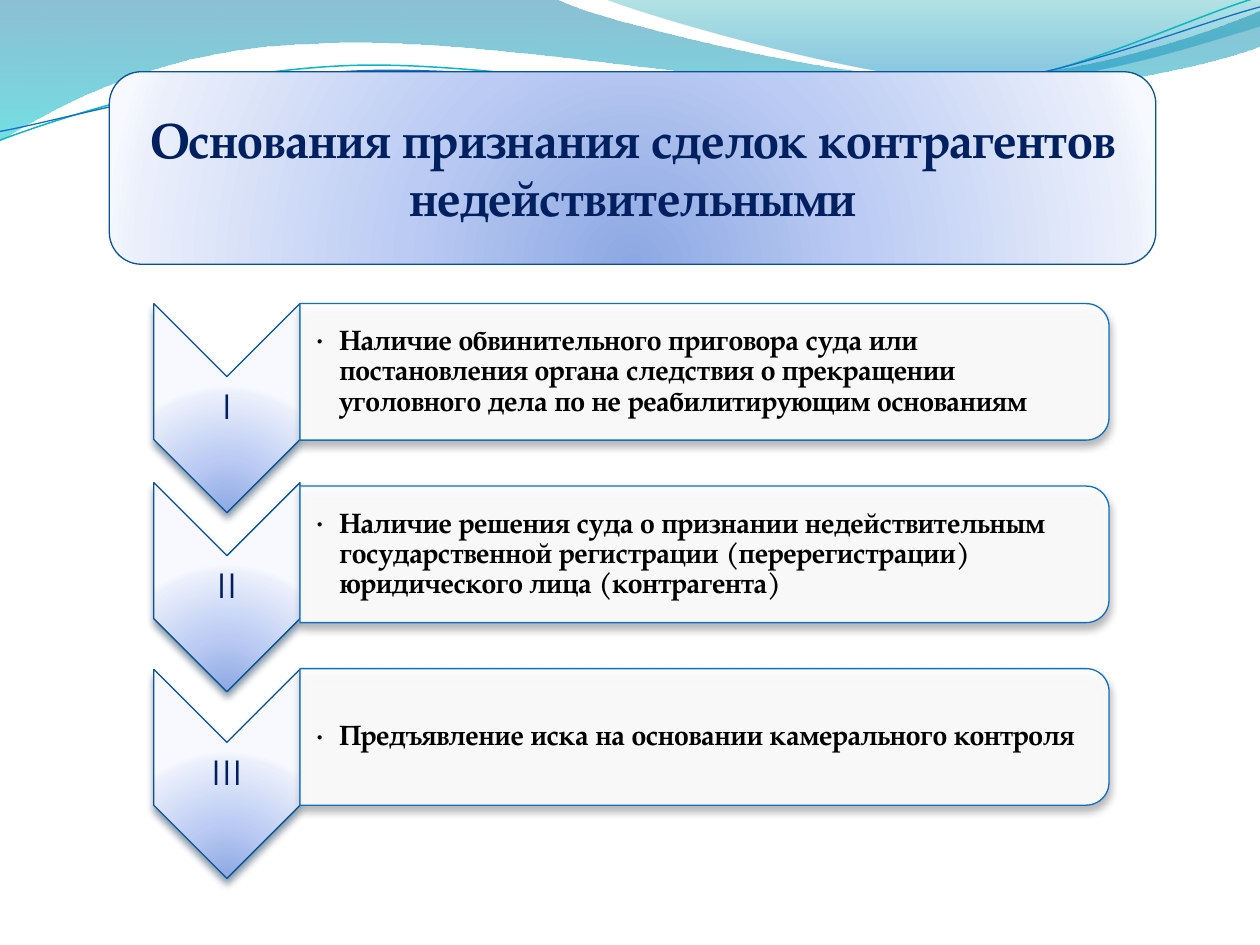
from dataclasses import dataclass

from lxml import etree
from pptx import Presentation
from pptx.dml.color import RGBColor
from pptx.enum.shapes import MSO_SHAPE
from pptx.enum.text import MSO_ANCHOR, PP_ALIGN
from pptx.oxml.ns import qn
from pptx.util import Pt

ROUND_RECT = MSO_SHAPE.ROUNDED_RECTANGLE
CHEVRON = MSO_SHAPE.CHEVRON
ROUND_SIDE = MSO_SHAPE.ROUND_2_SAME_RECTANGLE
CENTER, LEFT = PP_ALIGN.CENTER, PP_ALIGN.LEFT
MIDDLE = MSO_ANCHOR.MIDDLE


@dataclass(frozen=True)
class Theme:
    serif: str = "TeX Gyre Pagella"
    sans: str = "Montserrat"
    title_size: float = 28
    label_size: float = 20
    body_size: float = 16
    navy: str = "002060"
    black: str = "000000"
    white: str = "FFFFFF"
    edge: str = "095295"
    blue: str = "0F6FC6"
    teal: str = "0AB8BF"
    chevron_shadow: str = "042747"
    card_shadow: str = "5A5A5A"
    # Gradient stops: position, colour, opacity (all in percent)
    glow: tuple = ((0, "8DA8E3", 100), (43, "BBCBF3", 100),
                   (93, "EAEFFB", 100), (100, "F7F9FF", 100))
    wave_left: tuple = ((0, "0074A1", 45), (100, "00C6CF", 55))
    wave_right: tuple = ((0, "00A1A9", 30), (80, "008BBF", 45))


T = Theme()

# Outlines in points: one pair is a straight step, three pairs are a curve
WAVE_LEFT = [
    ((0, 0),), ((317, -1),),
    ((343, 12), (478, 45), (546, 45)), ((614, 45), (690, 19), (720, 6)),
    ((721, 26),), ((708, 32), (626, 55), (537, 54)),
    ((448, 54), (275, 20), (185, 24.5)), ((93, 26), (33, 60), (-1, 81)),
]
WAVE_RIGHT = [
    ((345, -1),), ((366, 8), (491, 45), (554, 47)),
    ((616, 50), (692, 23), (720, 15)), ((720, 0),),
]
# The two lines are turned by LINE_TURN degrees after drawing
LINE_TURN = 357.3
TEAL_LINE = [
    ((-1.4, 63.1),), ((34.2, 51.7), (114.3, 29.4), (199.4, 29.9)),
    ((284.4, 30.5), (425.8, 67.2), (512, 64.7)),
    ((599.2, 62.3), (676.1, 25.9), (720.6, 15.4)),
]
BLUE_LINE = [
    ((-1.1, 58.1),), ((33.2, 53.7), (118.2, 32.6), (204.3, 33.2)),
    ((290.4, 33.7), (429.1, 63.8), (515.3, 61.4)),
    ((601.4, 59.4), (678.9, 30), (721.4, 21)),
]

TITLE = "Основания признания сделок контрагентов недействительными"
# Label, statement, vertical shift of the chevron
ROWS = [
    ("I", "Наличие обвинительного приговора суда или постановления органа "
          "следствия о прекращении уголовного дела по не реабилитирующим "
          "основаниям", 0),
    ("II", "Наличие решения суда о признании недействительным "
           "государственной регистрации (перерегистрации) юридического лица "
           "(контрагента)", -2),
    ("III", "Предъявление иска на основании камерального контроля", 0.4),
]


def add_node(parent, tag, **attrs):
    return etree.SubElement(parent, qn(tag), {k: str(v) for k, v in attrs.items()})


def add_color(parent, color, opacity):
    node = add_node(parent, "a:srgbClr", val=color)
    add_node(node, "a:alpha", val=opacity * 1000)


def set_gradient(s, stops, radial=False):
    s.fill.gradient()
    grad = s.fill._xPr.find(qn("a:gradFill"))
    grad.clear()
    grad.set("rotWithShape", "0")
    gs_list = add_node(grad, "a:gsLst")
    for pos, color, opacity in stops:
        add_color(add_node(gs_list, "a:gs", pos=pos * 1000), color, opacity)
    if radial:
        focus = add_node(grad, "a:path", path="circle")
        add_node(focus, "a:fillToRect", l=50000, t=130000, r=50000, b=-30000)
    else:
        add_node(grad, "a:lin", ang=5400000, scaled=1)


def set_line(s, color, width=0.75):
    s.line.color.rgb = RGBColor.from_string(color)
    s.line.width = Pt(width)


def set_shadow(s, color):
    effects = s._element.spPr.find(qn("a:effectLst"))
    shadow = add_node(effects, "a:outerShdw", blurRad=Pt(4.5), dist=Pt(3),
                      dir=5400000, rotWithShape=0)
    add_color(shadow, color, 48)


def add_outline(slide, steps, close):
    """Join the end of each step, then bend the steps that are curves."""
    ends = [(Pt(step[-1][0]), Pt(step[-1][1])) for step in steps]
    builder = slide.shapes.build_freeform(*ends[0])
    builder.add_line_segments(ends[1:], close=close)
    s = builder.convert_to_shape()
    s.shadow.inherit = False
    segments = list(s._element.iter(qn("a:lnTo")))
    for step, segment in zip(steps[1:], segments):
        if len(step) == 3:
            curve = etree.Element(qn("a:cubicBezTo"))
            for x, y in step:
                add_node(curve, "a:pt", x=Pt(x) - s.left, y=Pt(y) - s.top)
            segment.getparent().replace(segment, curve)
    return s


def add_box(slide, kind, x, y, w, h, turned=False):
    """Add a shape that fills the box, turned a quarter clockwise if asked."""
    if turned:
        x, y, w, h = x + (w - h) / 2, y + (h - w) / 2, h, w
    s = slide.shapes.add_shape(kind, Pt(x), Pt(y), Pt(w), Pt(h))
    s.rotation = 90 if turned else 0
    s.shadow.inherit = False
    return s


def write(s, text, *, font, size, color, bold=False, align=CENTER,
          spacing=1.0, margins=None, bullet=False):
    tf = s.text_frame
    tf.word_wrap = True
    tf.vertical_anchor = MIDDLE
    if margins:
        (tf.margin_left, tf.margin_top,
         tf.margin_right, tf.margin_bottom) = map(Pt, margins)
    p = tf.paragraphs[0]
    p.alignment = align
    p.line_spacing = spacing
    if bullet:
        pPr = p._p.get_or_add_pPr()
        pPr.set("marL", str(Pt(13.5)))
        pPr.set("indent", str(-Pt(13.5)))
        add_node(pPr, "a:buFont", typeface=T.sans)
        add_node(pPr, "a:buChar", char="•")
    r = p.add_run()
    r.text = text
    r.font.name = font
    r.font.size = Pt(size)
    r.font.bold = bold
    r.font.color.rgb = RGBColor.from_string(color)


def add_waves(slide):
    for steps, stops in ((WAVE_LEFT, T.wave_left), (WAVE_RIGHT, T.wave_right)):
        s = add_outline(slide, steps, close=True)
        set_gradient(s, stops)
        s.line.fill.background()
    for steps, color, width in ((TEAL_LINE, T.teal, 0.85), (BLUE_LINE, T.blue, 0.75)):
        s = add_outline(slide, steps, close=False)
        s.rotation = LINE_TURN
        s.fill.background()
        set_line(s, color, width)


def add_title(slide, x, y, w, h):
    s = add_box(slide, ROUND_RECT, x, y, w, h)
    set_gradient(s, T.glow, radial=True)
    set_line(s, T.edge)
    write(s, TITLE, font=T.serif, size=T.title_size, color=T.navy, bold=True)


def add_row(slide, x, y, w, h, label, statement, shift):
    chevron_w, chevron_h, label_h, pad = 83.5, 119.5, 36, 3.6

    # Chevron with its number
    top = y + shift
    s = add_box(slide, CHEVRON, x, top, chevron_w, chevron_h, turned=True)
    set_gradient(s, T.glow, radial=True)
    set_line(s, T.edge)
    set_shadow(s, T.chevron_shadow)
    s = slide.shapes.add_textbox(Pt(x), Pt(top + (chevron_h - label_h) / 2),
                                 Pt(chevron_w), Pt(label_h))
    write(s, label, font=T.sans, size=T.label_size, color=T.navy,
          spacing=0.9, margins=(0.9, 0.9, 0.9, 0.9))

    # Card with its statement
    left, card_w = x + chevron_w, w - chevron_w
    s = add_box(slide, ROUND_SIDE, left, y, card_w, h, turned=True)
    s.fill.solid()
    s.fill.fore_color.rgb = RGBColor.from_string(T.white)
    add_node(s.fill._xPr.find(qn("a:solidFill"))[0], "a:alpha", val=90000)
    set_line(s, T.blue)
    set_shadow(s, T.card_shadow)
    s = slide.shapes.add_textbox(Pt(left), Pt(y + pad),
                                 Pt(card_w - pad), Pt(h - 2 * pad))
    write(s, statement, font=T.serif, size=T.body_size, color=T.black, bold=True,
          align=LEFT, spacing=0.9, margins=(9, 0.9, 0.9, 0.9), bullet=True)


def main():
    prs = Presentation()
    prs.slide_width, prs.slide_height = Pt(720), Pt(540)
    slide = prs.slides.add_slide(prs.slide_layouts[6])
    add_waves(slide)
    add_title(slide, 62.5, 41, 598, 110)
    for i, row in enumerate(ROWS):
        add_row(slide, 87.9, 173.5 + 104.3 * i, 545.8, 78, *row)
    prs.save("out.pptx")


if __name__ == "__main__":
    main()
